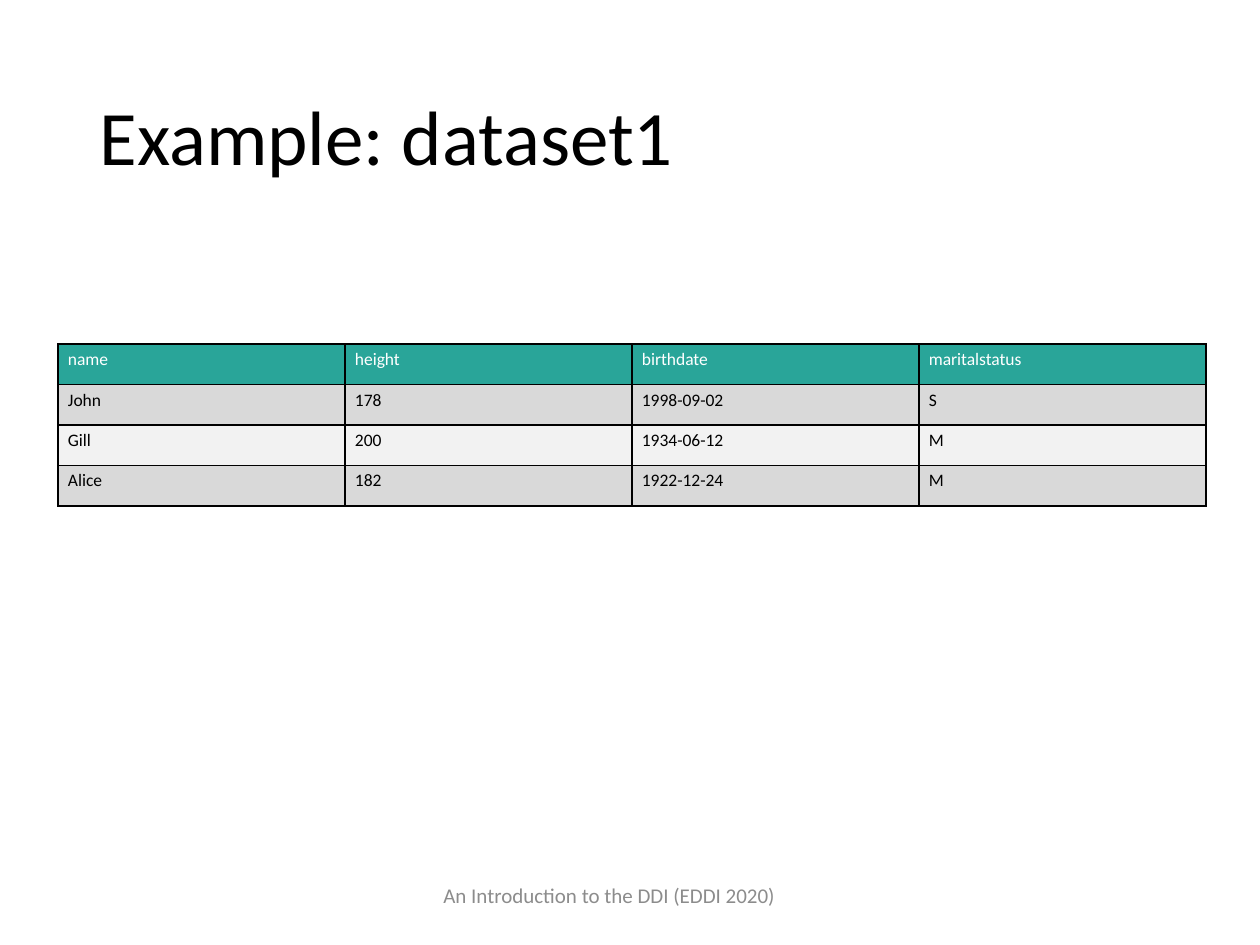
import dataclasses

import pptx
import pptx.dml.color
import pptx.enum.text
import pptx.oxml.ns
import pptx.util
from lxml import etree

SCALE = 914400 / 126


@dataclasses.dataclass(frozen=True)
class Theme:
    font: str = "Calibri"
    ink: str = "000000"
    white: str = "FFFFFF"
    muted: str = "8C8C8C"
    head: str = "29A599"
    bands: tuple[str, str] = ("D9D9D9", "F2F2F2")
    title: int = 44
    note: int = 12
    cell: int = 10
    rule: int = 1


@dataclasses.dataclass(frozen=True)
class Box:
    left: int
    top: int
    width: int
    height: int

    def emu(self) -> tuple[int, ...]:
        return tuple(px(n) for n in dataclasses.astuple(self))


THEME = Theme()
ROWS = (
    ("name", "height", "birthdate", "maritalstatus"),
    ("John", "178", "1998-09-02", "S"),
    ("Gill", "200", "1934-06-12", "M"),
    ("Alice", "182", "1922-12-24", "M"),
)


def px(n: int) -> int:
    return round(n * SCALE)


def rgb(code: str) -> pptx.dml.color.RGBColor:
    return pptx.dml.color.RGBColor.from_string(code)


def write(frame, text: str, size: int, color: str) -> None:
    frame.text = text
    line = frame.paragraphs[0]
    line.alignment = pptx.enum.text.PP_ALIGN.LEFT
    line.font.name = THEME.font
    line.font.size = pptx.util.Pt(size)
    line.font.color.rgb = rgb(color)


def edge(cell) -> None:
    """Draw a solid border on all four sides; call before the fill is set."""
    props = cell._tc.get_or_add_tcPr()
    qn = pptx.oxml.ns.qn
    for side in ("lnL", "lnR", "lnT", "lnB"):
        line = etree.SubElement(props, qn(f"a:{side}"), w=str(pptx.util.Pt(THEME.rule)))
        fill = etree.SubElement(line, qn("a:solidFill"))
        etree.SubElement(fill, qn("a:srgbClr"), val=THEME.ink)


def add_title(slide, box: Box, text: str) -> None:
    title = slide.shapes.title
    title.left, title.top, title.width, title.height = box.emu()
    frame = title.text_frame
    write(frame, text, THEME.title, THEME.ink)
    frame.vertical_anchor = pptx.enum.text.MSO_ANCHOR.MIDDLE
    frame.paragraphs[0].line_spacing = 0.9


def add_grid(slide, box: Box, rows: tuple[tuple[str, ...], ...]) -> None:
    table = slide.shapes.add_table(len(rows), len(rows[0]), *box.emu()).table
    table.first_row = table.horz_banding = False
    for r, row in enumerate(rows):
        fill = THEME.bands[(r - 1) % 2] if r else THEME.head
        color = THEME.ink if r else THEME.white
        for c, text in enumerate(row):
            cell = table.cell(r, c)
            cell.margin_left = cell.margin_right = px(10)
            cell.margin_top = cell.margin_bottom = px(5)
            edge(cell)
            cell.fill.solid()
            cell.fill.fore_color.rgb = rgb(fill)
            write(cell.text_frame, text, THEME.cell, color)


def add_note(slide, box: Box, text: str) -> None:
    frame = slide.shapes.add_textbox(*box.emu()).text_frame
    frame.word_wrap = True
    write(frame, text, THEME.note, THEME.muted)


def main() -> None:
    deck = pptx.Presentation()
    deck.slide_width, deck.slide_height = px(1260), px(945)
    slide = deck.slides.add_slide(deck.slide_layouts[5])
    add_title(slide, Box(87, 49, 1091, 183), "Example: dataset1")
    add_grid(slide, Box(58, 344, 1148, 162), ROWS)
    add_note(slide, Box(431, 876, 399, 50), "An Introduction to the DDI (EDDI 2020)")
    deck.save("out.pptx")


if __name__ == "__main__":
    main()
